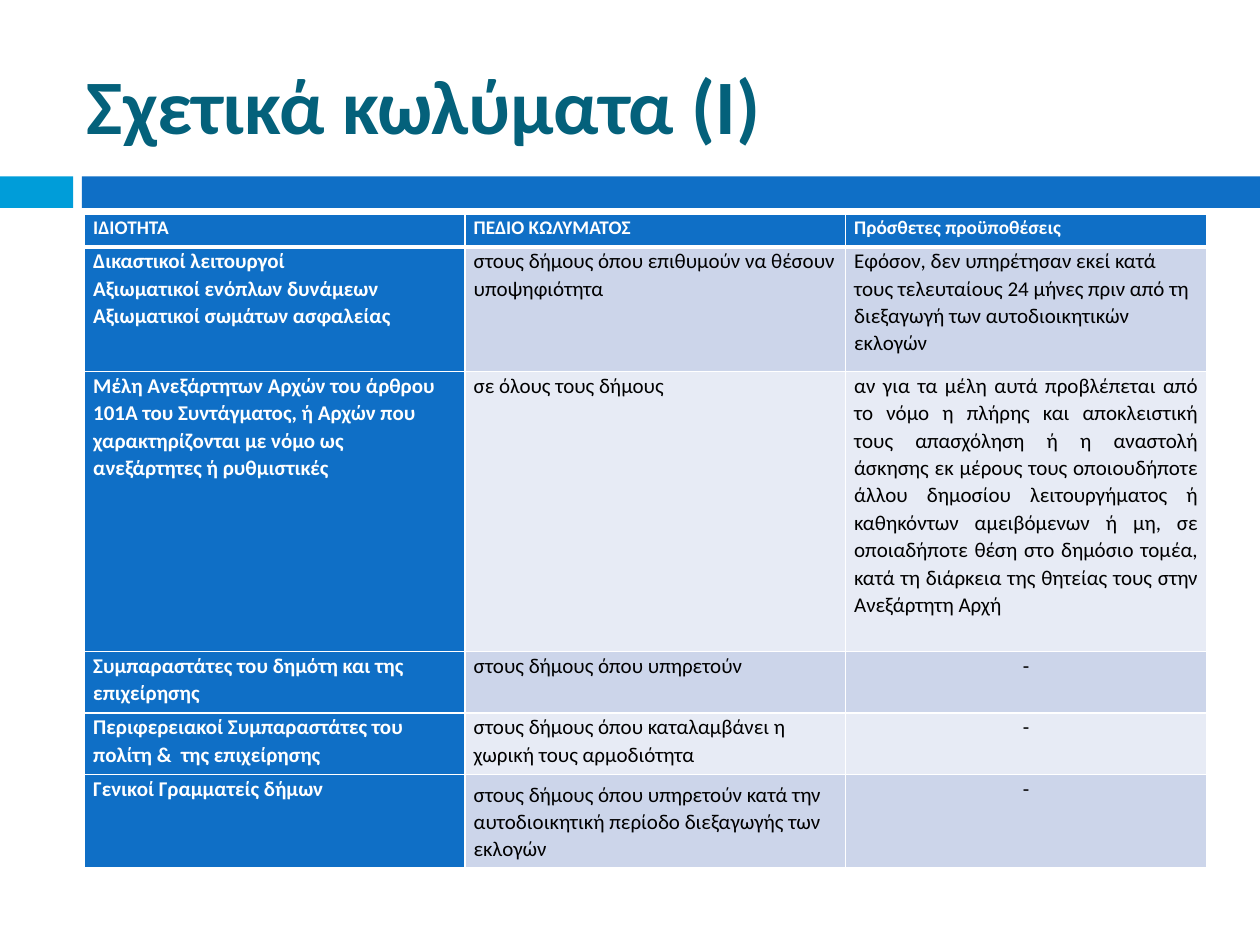
import pptx
import pptx.util
import pptx.dml.color
import pptx.enum.shapes
import pptx.enum.text
import pptx.oxml.ns
import lxml.etree

Inches, Pt = pptx.util.Inches, pptx.util.Pt
ALIGN = pptx.enum.text.PP_ALIGN
ANCHOR = pptx.enum.text.MSO_ANCHOR
qn = pptx.oxml.ns.qn

BLUE, CYAN, TEAL = "0F6FC6", "009DD9", "04617B"
WHITE, BLACK = "FFFFFF", "000000"
BANDS = ["CCD5EA", "E7EBF5"]


def color(hex_value):
    return pptx.dml.color.RGBColor.from_string(hex_value)


def set_borders(cell, widths):
    """Draw white borders; widths are points for left, right, top, bottom."""
    properties = cell._tc.get_or_add_tcPr()
    for position, (side, width) in enumerate(zip("LRTB", widths)):
        line = lxml.etree.Element(qn(f"a:ln{side}"), w=str(Pt(width)))
        fill = lxml.etree.SubElement(line, qn("a:solidFill"))
        lxml.etree.SubElement(fill, qn("a:srgbClr"), val=WHITE)
        properties.insert(position, line)


prs = pptx.Presentation()
prs.slide_width, prs.slide_height = Inches(10), Inches(7.5)
slide = prs.slides.add_slide(prs.slide_layouts[5])

# Bars under the title
for left, width, bar_color in [(0, 0.58, CYAN), (0.65, 9.35, BLUE)]:
    bar = slide.shapes.add_shape(pptx.enum.shapes.MSO_SHAPE.RECTANGLE,
                                 Inches(left), Inches(1.4), Inches(width), Inches(0.25))
    bar.shadow.inherit = False
    bar.fill.solid()
    bar.fill.fore_color.rgb = color(bar_color)
    bar.line.fill.background()

# Title
title = slide.shapes.title
title.left, title.top = Inches(0.59), Inches(0.28)
title.width, title.height = Inches(8.92), Inches(1.08)
title.text_frame.text = "Σχετικά κωλύματα (Ι)"
title.text_frame.vertical_anchor = ANCHOR.MIDDLE
heading = title.text_frame.paragraphs[0]
heading.alignment = ALIGN.LEFT
heading_font = heading.runs[0].font
heading_font.name, heading_font.size, heading_font.bold = "Calibri", Pt(44), True
heading_font.color.rgb = color(TEAL)

# Table of impediments: capacity, scope, additional conditions
impediments = [
    ("ΙΔΙΟΤΗΤΑ", "ΠΕΔΙΟ ΚΩΛΥΜΑΤΟΣ", "Πρόσθετες προϋποθέσεις"),
    ("Δικαστικοί λειτουργοί\nΑξιωματικοί ενόπλων δυνάμεων Αξιωματικοί σωμάτων ασφαλείας",
     "στους δήμους όπου επιθυμούν να θέσουν υποψηφιότητα",
     "Εφόσον, δεν υπηρέτησαν εκεί κατά τους τελευταίους 24 μήνες πριν από τη "
     "διεξαγωγή των αυτοδιοικητικών εκλογών"),
    ("Μέλη Ανεξάρτητων Αρχών του άρθρου 101Α του Συντάγματος, ή Αρχών που "
     "χαρακτηρίζονται με νόμο ως ανεξάρτητες ή ρυθμιστικές",
     "σε όλους τους δήμους",
     "αν για τα μέλη αυτά προβλέπεται από το νόμο η πλήρης και αποκλειστική τους "
     "απασχόληση ή η αναστολή άσκησης εκ μέρους τους οποιουδήποτε άλλου δημοσίου "
     "λειτουργήματος ή καθηκόντων αμειβόμενων ή μη, σε οποιαδήποτε θέση στο δημόσιο "
     "τομέα, κατά τη διάρκεια της θητείας τους στην Ανεξάρτητη Αρχή"),
    ("Συμπαραστάτες του δημότη και της επιχείρησης", "στους δήμους όπου υπηρετούν", "-"),
    ("Περιφερειακοί Συμπαραστάτες του πολίτη &  της επιχείρησης",
     "στους δήμους όπου καταλαμβάνει η χωρική τους αρμοδιότητα", "-"),
    ("Γενικοί Γραμματείς δήμων",
     "στους δήμους όπου υπηρετούν κατά την αυτοδιοικητική περίοδο διεξαγωγής των εκλογών",
     "-"),
]
column_widths = [3.02, 3.02, 2.87]
row_heights = [0.26, 0.99, 2.22, 0.49, 0.49, 0.74]
condition_alignments = [ALIGN.LEFT, ALIGN.LEFT, ALIGN.JUSTIFY] + [ALIGN.CENTER] * 3

table = slide.shapes.add_table(len(row_heights), len(column_widths), Inches(0.67), Inches(1.7),
                               Inches(sum(column_widths)), Inches(sum(row_heights))).table
for column, width in zip(table.columns, column_widths):
    column.width = Inches(width)
for row, height in zip(table.rows, row_heights):
    row.height = Inches(height)

for r, texts in enumerate(impediments):
    for c, text in enumerate(texts):
        cell = table.cell(r, c)
        is_heading = r == 0 or c == 0
        cell.margin_left = cell.margin_right = Inches(0.07)
        cell.margin_top = cell.margin_bottom = 0
        cell.fill.solid()
        cell.fill.fore_color.rgb = color(BLUE if is_heading else BANDS[(r - 1) % 2])
        set_borders(cell, [1, 1, 3 if r == 1 else 1, 3 if r == 0 else 1])
        cell.text_frame.text = text
        for paragraph in cell.text_frame.paragraphs:
            paragraph.line_spacing = 1.07
            paragraph.alignment = condition_alignments[r] if c == 2 else ALIGN.LEFT
            font = paragraph.runs[0].font
            font.name, font.size, font.bold = "Calibri", Pt(11 if r == 0 else 12), is_heading
            font.color.rgb = color(WHITE if is_heading else BLACK)

# The last scope sits in the middle of its row
table.cell(5, 1).vertical_anchor = ANCHOR.MIDDLE

prs.save("out.pptx")
